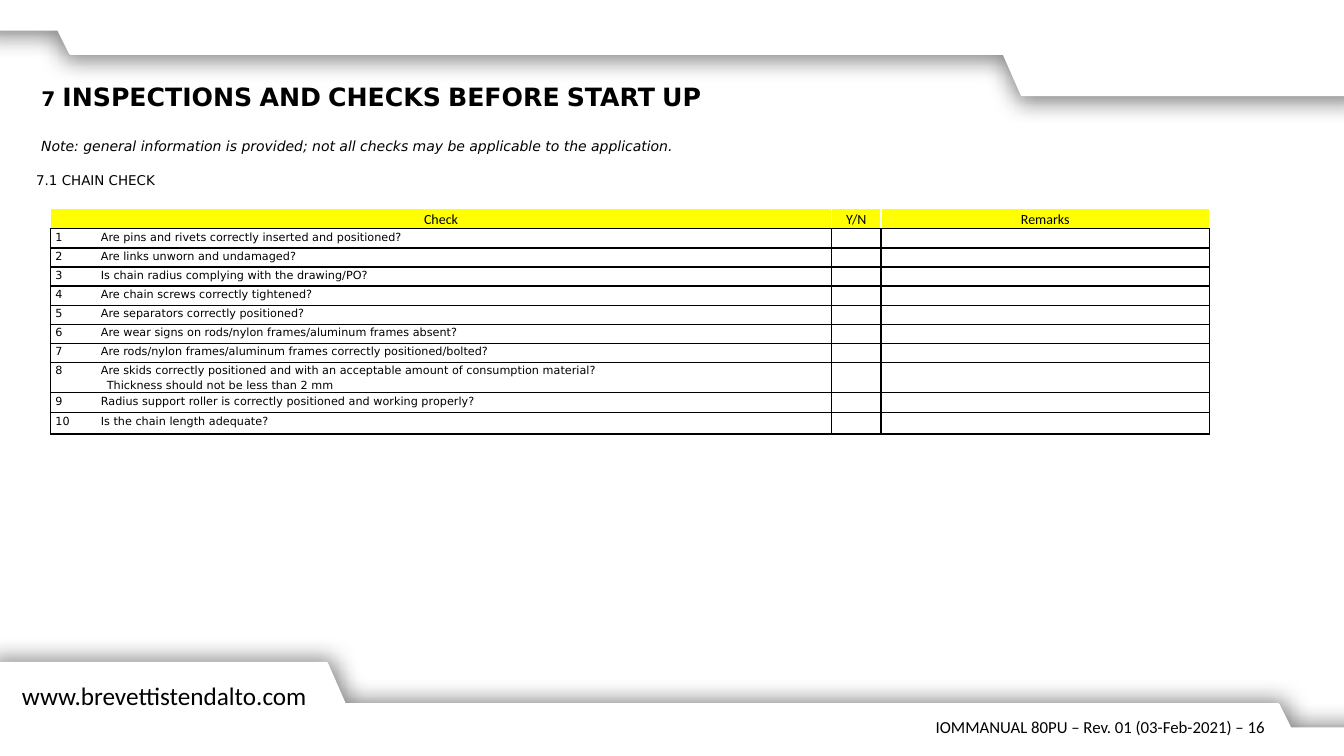
from dataclasses import dataclass, field
from typing import Any

from lxml.etree import SubElement, fromstring
from pptx import Presentation
from pptx.dml.color import RGBColor
from pptx.enum.text import MSO_ANCHOR as Anchor, MSO_AUTO_SIZE as AutoSize, PP_ALIGN as Align
from pptx.oxml.ns import nsdecls, qn
from pptx.util import Inches, Pt


@dataclass(frozen=True)
class Theme:
    black: str = "000000"
    white: str = "FFFFFF"
    yellow: str = "FFFF00"
    sans: str = "DejaVu Sans"
    footer_face: str = "Calibri"
    large: int = 18
    medium: int = 12
    small: int = 10
    tiny: int = 8


THEME = Theme()
WIDTH, HEIGHT = Inches(13.33), Inches(7.5)


def across(percent: float) -> int:
    return round(WIDTH * percent / 100)


def down(percent: float) -> int:
    return round(HEIGHT * percent / 100)


@dataclass(frozen=True)
class Area:
    """Left, top, width and height in percent of the slide."""
    left: float
    top: float
    width: float
    height: float

    def emu(self) -> tuple[int, int, int, int]:
        return across(self.left), down(self.top), across(self.width), down(self.height)


@dataclass(frozen=True)
class Label:
    text: str
    area: Area
    font: dict[str, Any]
    align: Align = Align.LEFT
    small_caps: bool = False


@dataclass(frozen=True)
class Check:
    question: str
    height: float = 2.53
    detail: str = ""


@dataclass(frozen=True)
class Band:
    points: list[tuple[float, float]]
    shadow_angle: int


@dataclass(frozen=True)
class CellStyle:
    fill: str
    edge: str
    font: dict[str, Any] = field(default_factory=dict)
    align: Align = Align.JUSTIFY


def face(name: str, size: int, **extra: Any) -> dict[str, Any]:
    return {"name": name, "size": Pt(size), "bold": False, **extra}


# Content
HEADING = Label("7 INSPECTIONS AND CHECKS BEFORE START UP", Area(2.33, 10.13, 53.78, 9.47),
                face(THEME.sans, THEME.large, bold=True), small_caps=True)
LABELS = [
    Label("www.brevettistendalto.com", Area(0.9, 89.33, 23.02, 5.33),
          face(THEME.footer_face, THEME.large)),
    Label("Note: general information is provided; not all checks may be applicable "
          "to the application.", Area(2.33, 17.47, 50.63, 11.73),
          face(THEME.sans, THEME.small, italic=True)),
    Label("7.1 chain check", Area(1.95, 21.6, 44.85, 4),
          face(THEME.sans, THEME.medium), small_caps=True),
    Label("IOMMANUAL 80PU – Rev. 01 (03-Feb-2021) – 16", Area(65.93, 94.13, 28.95, 4),
          face(THEME.footer_face, THEME.medium), Align.RIGHT),
]
COLUMNS = {"Check": 58.13, "Y/N": 3.67, "Remarks": 24.45}
HEADER_HEIGHT = 2.67
CHECKS = [
    Check("Are pins and rivets correctly inserted and positioned?"),
    Check("Are links unworn and undamaged?"),
    Check("Is chain radius complying with the drawing/PO?"),
    Check("Are chain screws correctly tightened?"),
    Check("Are separators correctly positioned?"),
    Check("Are wear signs on rods/nylon frames/aluminum frames absent?"),
    Check("Are rods/nylon frames/aluminum frames correctly positioned/bolted?"),
    Check("Are skids correctly positioned and with an acceptable amount of consumption material?",
          4, "Thickness should not be less than 2 mm"),
    Check("Radius support roller is correctly positioned and working properly?", 2.67),
    Check("Is the chain length adequate?", 2.8),
]
HEADER_STYLE = CellStyle(THEME.yellow, THEME.white,
                         face(THEME.footer_face, THEME.small), Align.CENTER)
BODY_STYLE = CellStyle(THEME.white, THEME.black, face(THEME.sans, THEME.tiny))

# The bottom band is the top band turned half round
TOP_POINTS = [(-0.9, 3.87), (4.35, 3.87), (5.25, 7.07), (74.7, 7.07),
              (76.05, 12.53), (101.25, 12.53), (101.25, -1.33), (-0.9, -1.33)]
BANDS = [Band([(100.35 - x, 100.27 - y) for x, y in TOP_POINTS], 303), Band(TOP_POINTS, 123)]


def draw_band(slide, band: Band) -> None:
    first, *rest = [(across(x), down(y)) for x, y in band.points]
    builder = slide.shapes.build_freeform(*first)
    builder.add_line_segments(rest, close=True)
    shape = builder.convert_to_shape()
    shape.fill.solid()
    for paint in (shape.fill.fore_color, shape.line.color):
        paint.rgb = RGBColor.from_string(THEME.white)
    shape.line.width = Pt(2)
    shape._element.spPr.append(fromstring(
        f'<a:effectLst {nsdecls("a")}><a:outerShdw blurRad="{Pt(16)}" dist="{Pt(4)}" '
        f'dir="{band.shadow_angle * 60000}" algn="ctr" rotWithShape="0">'
        f'<a:srgbClr val="{THEME.black}"><a:alpha val="48000"/></a:srgbClr>'
        '</a:outerShdw></a:effectLst>'))


def write(paragraph, text: str, font: dict[str, Any], align: Align):
    paragraph.alignment = align
    run = paragraph.add_run()
    run.text = text
    for name, value in font.items():
        setattr(run.font, name, value)
    run.font.color.rgb = RGBColor.from_string(THEME.black)
    return run


def draw_label(shape, label: Label) -> None:
    shape.left, shape.top, shape.width, shape.height = label.area.emu()
    frame = shape.text_frame
    settings = {"word_wrap": True, "auto_size": AutoSize.NONE, "vertical_anchor": Anchor.TOP}
    for name, value in settings.items():
        setattr(frame, name, value)
    run = write(frame.paragraphs[0], label.text, label.font, label.align)
    if label.small_caps:
        run.font._element.set("cap", "small")


def format_cell(cell, style: CellStyle) -> None:
    cell.margin_left = cell.margin_right = Inches(0.05)
    cell.margin_top = cell.margin_bottom = 0
    cell.fill.solid()
    cell.fill.fore_color.rgb = RGBColor.from_string(style.fill)
    for position, side in enumerate(("lnL", "lnR", "lnT", "lnB")):
        color = THEME.black if side == "lnB" else style.edge
        cell._tc.tcPr.insert(position, fromstring(
            f'<a:{side} {nsdecls("a")} w="{Pt(1)}"><a:solidFill>'
            f'<a:srgbClr val="{color}"/></a:solidFill></a:{side}>'))


def write_cell(cell, lines: list[str], style: CellStyle) -> None:
    format_cell(cell, style)
    frame = cell.text_frame
    for index, line in enumerate(lines):
        paragraph = frame.add_paragraph() if index else frame.paragraphs[0]
        paragraph.line_spacing = 1.15
        properties = paragraph._p.get_or_add_pPr()
        if index:
            properties.set("marL", str(Inches(0.51)))
        if "\t" in line:
            tabs = SubElement(properties, qn("a:tabLst"))
            SubElement(tabs, qn("a:tab"), pos=str(Inches(0.45)), algn="l")
        write(paragraph, line, style.font, style.align)
    if not lines:
        SubElement(frame.paragraphs[0]._p, qn("a:endParaRPr"), sz=str(THEME.tiny * 100))


def draw_checklist(slide) -> None:
    heights = [HEADER_HEIGHT, *(check.height for check in CHECKS)]
    area = Area(3.75, 27.6, sum(COLUMNS.values()), sum(heights))
    table = slide.shapes.add_table(len(heights), len(COLUMNS), *area.emu()).table
    for row, height in zip(table.rows, heights):
        row.height = down(height)
    for index, (caption, width) in enumerate(COLUMNS.items()):
        table.columns[index].width = across(width)
        write_cell(table.cell(0, index), [caption], HEADER_STYLE)
    for number, check in enumerate(CHECKS, 1):
        lines = [f"{number}\t{check.question}"] + ([check.detail] if check.detail else [])
        for index in range(len(COLUMNS)):
            write_cell(table.cell(number, index), [] if index else lines, BODY_STYLE)


def main() -> None:
    deck = Presentation()
    deck.slide_width, deck.slide_height = WIDTH, HEIGHT
    slide = deck.slides.add_slide(deck.slide_layouts[5])

    # Page frame
    for band in BANDS:
        draw_band(slide, band)

    # Heading, note, section name and footer
    draw_label(slide.shapes.title, HEADING)
    for label in LABELS:
        draw_label(slide.shapes.add_textbox(*label.area.emu()), label)

    # Checklist
    draw_checklist(slide)
    deck.save("out.pptx")


if __name__ == "__main__":
    main()
